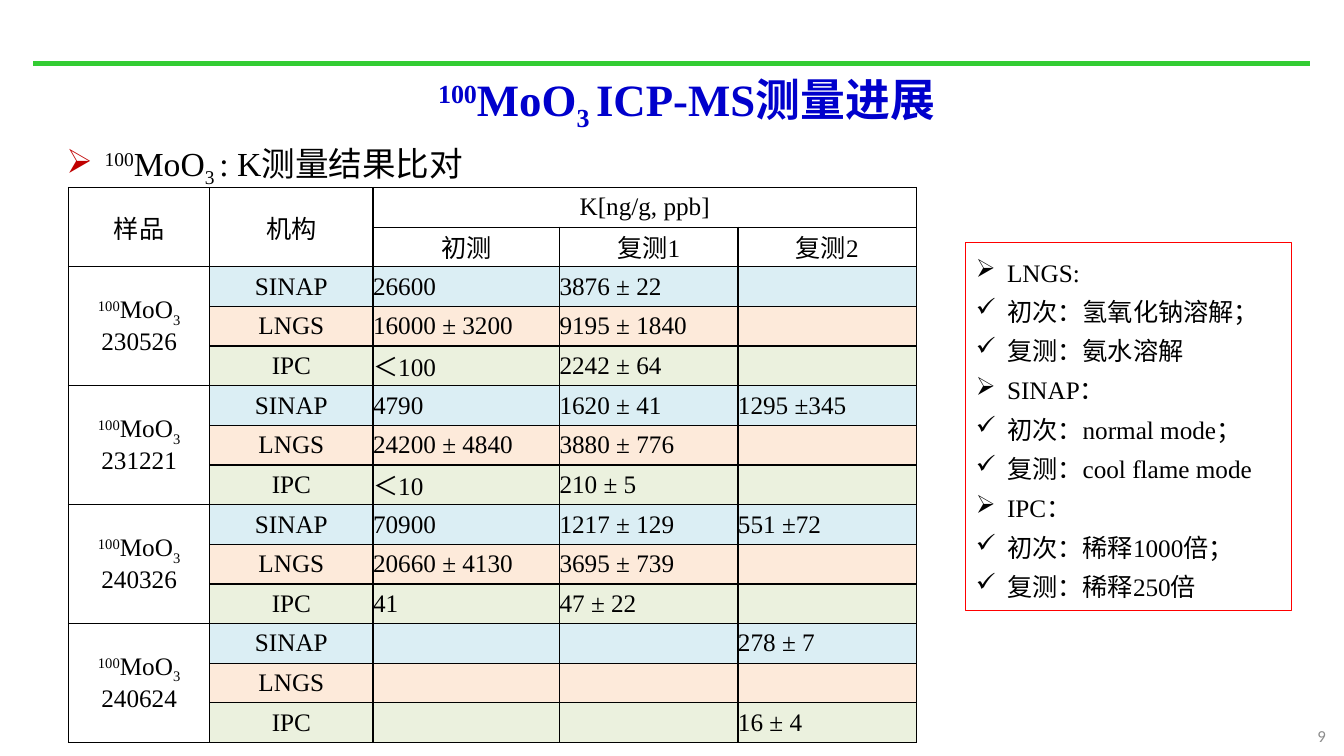
import pptx
import pptx.util
import pptx.dml.color
import pptx.enum.shapes
import pptx.enum.text
import pptx.oxml.ns
from lxml import etree

Inches = pptx.util.Inches
Pt = pptx.util.Pt
ALIGN = pptx.enum.text.PP_ALIGN
MIDDLE = pptx.enum.text.MSO_ANCHOR.MIDDLE
qn = pptx.oxml.ns.qn

COLORS = {
    "rule": "33CC33", "title": "0000CC", "text": "000000", "number": "8C8C8C",
    "bullet": "C00000", "frame": "FF0000", "white": "FFFFFF",
    "SINAP": "DBEEF4", "LNGS": "FDEADA", "IPC": "EBF1DE",
}
FORMULA = [("100", 30), ("MoO", 0), ("3", -25)]
SPACED_FORMULA = FORMULA[:2] + [("3 ", -25)]
COLUMN_WIDTHS = [1.4, 1.62, 1.85, 1.77, 1.77]
INSTITUTES = ["SINAP", "LNGS", "IPC"]
SAMPLES = {
    "230526": [["26600", "3876 ± 22", ""],
               ["16000 ± 3200", "9195 ± 1840", ""],
               ["＜100", "2242 ± 64", ""]],
    "231221": [["4790", "1620 ± 41", "1295 ±345"],
               ["24200 ± 4840", "3880 ± 776", ""],
               ["＜10", "210 ± 5", ""]],
    "240326": [["70900", "1217 ± 129", "551 ±72"],
               ["20660 ± 4130", "3695 ± 739", ""],
               ["41", "47 ± 22", ""]],
    "240624": [["", "", "278 ± 7"],
               ["", "", ""],
               ["", "", "16 ± 4"]],
}
METHODS = {
    "LNGS:": ["初次：氢氧化钠溶解；", "复测：氨水溶解"],
    "SINAP：": ["初次：normal mode；", "复测：cool flame mode"],
    "IPC：": ["初次：稀释1000倍；", "复测：稀释250倍"],
}


def rgb(name):
    return pptx.dml.color.RGBColor.from_string(COLORS[name])


def format_font(font, size, color="text", name="Times New Roman", bold=False):
    font.size = Pt(size)
    font.name = name
    font.bold = bold
    font.color.rgb = rgb(color)


def add_runs(paragraph, parts, size, color="text", bold=False):
    for text, baseline in parts:
        run = paragraph.add_run()
        run.text = text
        format_font(run.font, size, color, bold=bold)
        if baseline:
            run._r.get_or_add_rPr().set("baseline", str(baseline * 1000))


def add_bullet(paragraph, character, indent, color=None):
    properties = paragraph._p.get_or_add_pPr()
    properties.set("marL", str(Inches(indent)))
    properties.set("indent", str(-Inches(indent)))
    if color:
        bullet_color = etree.SubElement(properties, qn("a:buClr"))
        etree.SubElement(bullet_color, qn("a:srgbClr"), val=COLORS[color])
    etree.SubElement(properties, qn("a:buChar"), char=character)
    paragraph.line_spacing = 1.3


def add_text_box(slide, left, top, width, height):
    box = slide.shapes.add_textbox(Inches(left), Inches(top), Inches(width), Inches(height))
    box.text_frame.word_wrap = True
    return box


def add_rule(slide):
    rule = slide.shapes.add_connector(
        pptx.enum.shapes.MSO_CONNECTOR.STRAIGHT,
        Inches(0.33), Inches(0.63), Inches(12.99), Inches(0.63))
    rule.line.color.rgb = rgb("rule")
    rule.line.width = Pt(4)
    etree.SubElement(rule._element.spPr, qn("a:effectLst"))


def set_title(slide):
    title = slide.shapes.title
    title.left, title.top = Inches(0.81), Inches(0.61)
    title.width, title.height = Inches(12), Inches(0.81)
    title.text_frame.vertical_anchor = MIDDLE
    paragraph = title.text_frame.paragraphs[0]
    paragraph.alignment = ALIGN.CENTER
    add_runs(paragraph, SPACED_FORMULA + [("ICP-MS测量进展", 0)], 32, "title", True)


def add_subtitle(slide):
    paragraph = add_text_box(slide, 0.56, 1.23, 9.13, 0.58).text_frame.paragraphs[0]
    add_bullet(paragraph, "➢", 0.38, "bullet")
    add_runs(paragraph, SPACED_FORMULA + [(": K测量结果比对", 0)], 24)


def add_slide_number(slide):
    frame = add_text_box(slide, 11.92, 7.1, 1.33, 0.4).text_frame
    frame.vertical_anchor = MIDDLE
    frame.text = "9"
    paragraph = frame.paragraphs[0]
    paragraph.alignment = ALIGN.RIGHT
    format_font(paragraph.runs[0].font, 12, "number", "Calibri")


def format_cell(cell, fill):
    cell.margin_left = cell.margin_right = cell.margin_top = cell.margin_bottom = 0
    cell.vertical_anchor = MIDDLE
    properties = cell._tc.get_or_add_tcPr()
    for side in ("a:lnL", "a:lnR", "a:lnT", "a:lnB"):
        border = etree.SubElement(properties, qn(side), w=str(Pt(1)))
        solid = etree.SubElement(border, qn("a:solidFill"))
        etree.SubElement(solid, qn("a:srgbClr"), val=COLORS["text"])
    cell.fill.solid()
    cell.fill.fore_color.rgb = rgb(fill)


def write_cell(cell, text, alignment=ALIGN.CENTER):
    paragraph = cell.text_frame.paragraphs[0]
    paragraph.alignment = alignment
    if text:
        add_runs(paragraph, [(text, 0)], 18)
    else:
        paragraph.font.size = Pt(18)


def add_results_table(slide):
    row_count = 2 + len(SAMPLES) * len(INSTITUTES)
    table = slide.shapes.add_table(
        row_count, len(COLUMN_WIDTHS), Inches(0.68), Inches(1.86),
        Inches(sum(COLUMN_WIDTHS)), Inches(5.51)).table
    table.first_row = table.horz_banding = False
    for column, width in zip(table.columns, COLUMN_WIDTHS):
        column.width = Inches(width)
    for index, row in enumerate(table.rows):
        row.height = Inches(5.51 / row_count)
        institute = INSTITUTES[(index - 2) % 3] if index > 1 else "white"
        for column, cell in enumerate(row.cells):
            format_cell(cell, institute if column else "white")

    for column, heading in enumerate(["样品", "机构"]):
        table.cell(0, column).merge(table.cell(1, column))
        write_cell(table.cell(0, column), heading)
    table.cell(0, 2).merge(table.cell(0, 4))
    write_cell(table.cell(0, 2), "K[ng/g, ppb]")
    for column, heading in enumerate(["初测", "复测1", "复测2"], 2):
        write_cell(table.cell(1, column), heading)

    for group, (sample, results) in enumerate(SAMPLES.items()):
        top = 2 + group * len(INSTITUTES)
        sample_cell = table.cell(top, 0)
        sample_cell.merge(table.cell(top + 2, 0))
        paragraph = sample_cell.text_frame.paragraphs[0]
        paragraph.alignment = ALIGN.CENTER
        add_runs(paragraph, FORMULA, 18)
        paragraph.add_line_break()
        add_runs(paragraph, [(sample, 0)], 18)
        for row, (institute, values) in enumerate(zip(INSTITUTES, results), top):
            write_cell(table.cell(row, 1), institute)
            for column, value in enumerate(values, 2):
                write_cell(table.cell(row, column), value, ALIGN.LEFT)


def add_methods_box(slide):
    box = slide.shapes.add_shape(
        pptx.enum.shapes.MSO_SHAPE.RECTANGLE,
        Inches(9.58), Inches(2.41), Inches(3.23), Inches(3.65))
    box.shadow.inherit = False
    box.fill.background()
    box.line.color.rgb = rgb("frame")
    box.line.width = Pt(0.75)
    frame = box.text_frame
    frame.word_wrap = True
    frame.vertical_anchor = pptx.enum.text.MSO_ANCHOR.TOP
    lines = []
    for institute, steps in METHODS.items():
        lines += [("➢", institute)] + [("✓", step) for step in steps]
    frame.text = "\n".join(text for _, text in lines)
    for paragraph, (character, _) in zip(frame.paragraphs, lines):
        add_bullet(paragraph, character, 0.31)
        paragraph.alignment = ALIGN.LEFT
        format_font(paragraph.runs[0].font, 18)


def main():
    presentation = pptx.Presentation()
    presentation.slide_width = Inches(13.33)
    presentation.slide_height = Inches(7.5)
    slide = presentation.slides.add_slide(presentation.slide_layouts[5])
    add_rule(slide)
    add_slide_number(slide)
    set_title(slide)
    add_results_table(slide)
    add_methods_box(slide)
    add_subtitle(slide)
    presentation.save("out.pptx")


if __name__ == "__main__":
    main()
